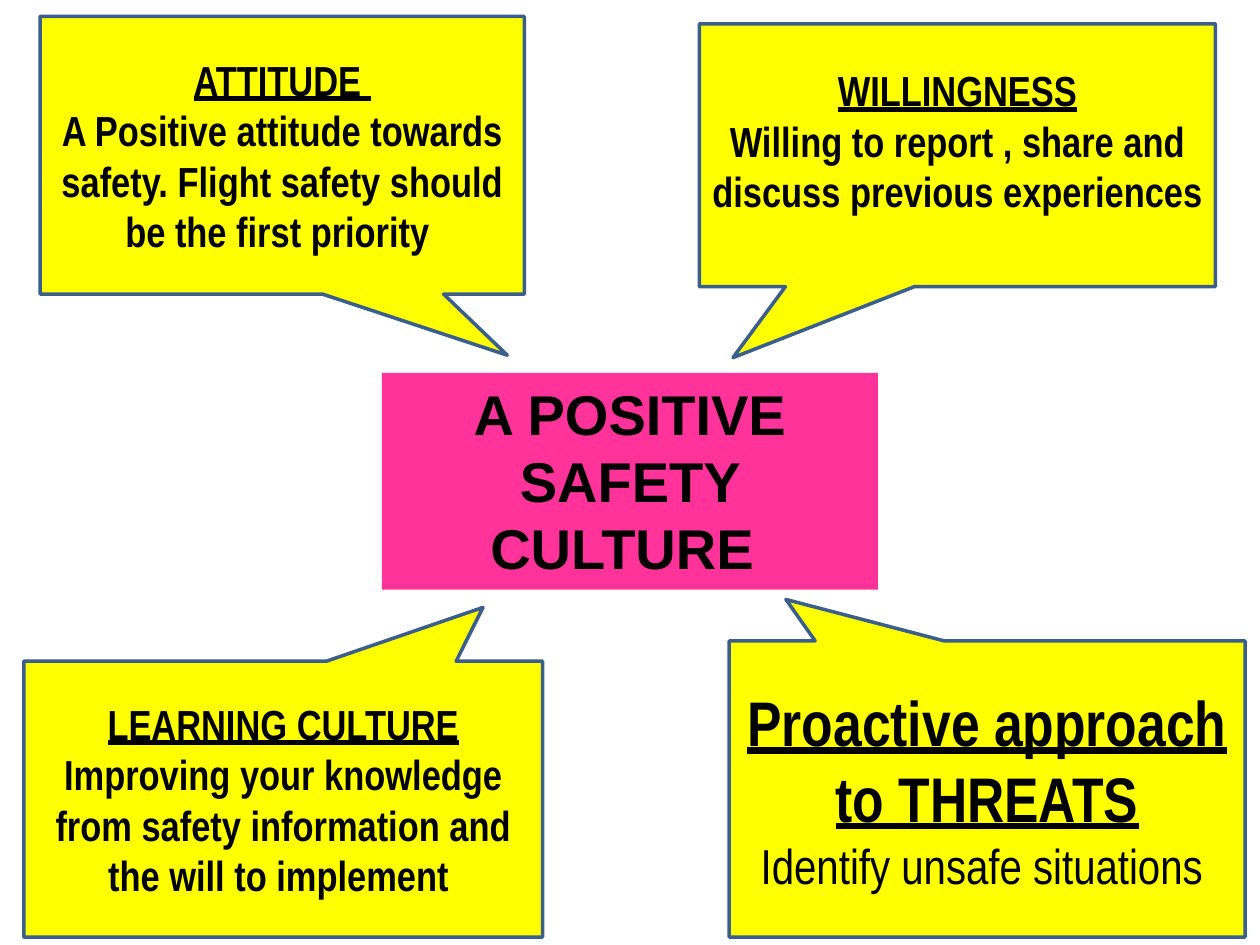
import dataclasses

import pptx
import pptx.dml.color
import pptx.enum.shapes
import pptx.enum.text
import pptx.util

Cm = pptx.util.Cm
Pt = pptx.util.Pt
Color = pptx.dml.color.RGBColor
Shape = pptx.enum.shapes.MSO_SHAPE
Anchor = pptx.enum.text.MSO_ANCHOR


@dataclasses.dataclass(frozen=True)
class Theme:
    text: Color = Color(0, 0, 0)
    center: Color = Color(255, 51, 153)
    callout: Color = Color(255, 255, 0)
    outline: Color = Color(58, 95, 140)
    center_font: str = "Arial"
    callout_font: str = "Arial Narrow"
    center_size: int = 32
    body_size: int = 24
    large_body_size: int = 28
    large_heading_size: int = 36


def write_text(paragraph, text, *, font, size, color, bold=True, underline=False):
    paragraph.alignment = pptx.enum.text.PP_ALIGN.CENTER
    run = paragraph.add_run()
    run.text = text
    run.font.name = font
    run.font.size = Pt(size)
    run.font.color.rgb = color
    run.font.bold = bold
    run.font.underline = underline


class SlideBuilder:
    def __init__(self, slide, theme):
        self.slide = slide
        self.theme = theme

    def add_box(self, kind, bounds, fill, anchor):
        shape = self.slide.shapes.add_shape(kind, *(Cm(value) for value in bounds))
        shape.shadow.inherit = False
        shape.fill.solid()
        shape.fill.fore_color.rgb = fill
        frame = shape.text_frame
        frame.word_wrap = True
        frame.vertical_anchor = anchor
        return shape

    def add_center(self, text, bounds):
        theme = self.theme
        shape = self.add_box(Shape.RECTANGLE, bounds, theme.center, Anchor.TOP)
        shape.line.fill.background()
        write_text(shape.text_frame.paragraphs[0], text, font=theme.center_font,
                   size=theme.center_size, color=theme.text)

    def add_callout(self, heading, body, bounds, tip, *, heading_size=None,
                    body_size=None, body_bold=True, bottom_inset=0.13):
        theme = self.theme
        shape = self.add_box(Shape.RECTANGULAR_CALLOUT, bounds, theme.callout, Anchor.MIDDLE)
        shape.adjustments[0], shape.adjustments[1] = tip
        shape.line.color.rgb = theme.outline
        shape.line.width = Pt(2)
        frame = shape.text_frame
        frame.margin_left = frame.margin_right = Cm(0.22)
        frame.margin_bottom = Cm(bottom_inset)
        write_text(frame.paragraphs[0], heading, font=theme.callout_font,
                   size=heading_size or theme.body_size, color=theme.text, underline=True)
        write_text(frame.add_paragraph(), body, font=theme.callout_font,
                   size=body_size or theme.body_size, color=theme.text, bold=body_bold)


def main():
    presentation = pptx.Presentation()
    presentation.slide_width = Cm(25.4)
    presentation.slide_height = Cm(19.05)
    slide = presentation.slides.add_slide(presentation.slide_layouts[6])
    theme = Theme()
    builder = SlideBuilder(slide, theme)

    builder.add_center("A POSITIVE SAFETY CULTURE ", (7.7, 7.52, 10, 4.37))
    builder.add_callout(
        "ATTITUDE ",
        "A Positive attitude towards safety. Flight safety should be the first priority ",
        (0.81, 0.33, 9.76, 5.6), (0.465, 0.72))
    builder.add_callout(
        "WILLINGNESS",
        "Willing to report , share and discuss previous experiences ",
        (14.1, 0.48, 10.4, 5.3), (-0.435, 0.77), bottom_inset=0.72)
    builder.add_callout(
        "Proactive approach to THREATS", "Identify unsafe situations ",
        (14.7, 12.92, 10.4, 5.97), (-0.39, -0.64),
        heading_size=theme.large_heading_size,
        body_size=theme.large_body_size, body_bold=False)
    builder.add_callout(
        "LEARNING CULTURE",
        "Improving your knowledge from safety information and the will to implement ",
        (0.48, 13.33, 10.46, 5.56), (0.385, -0.695))

    presentation.save("out.pptx")


if __name__ == "__main__":
    main()
